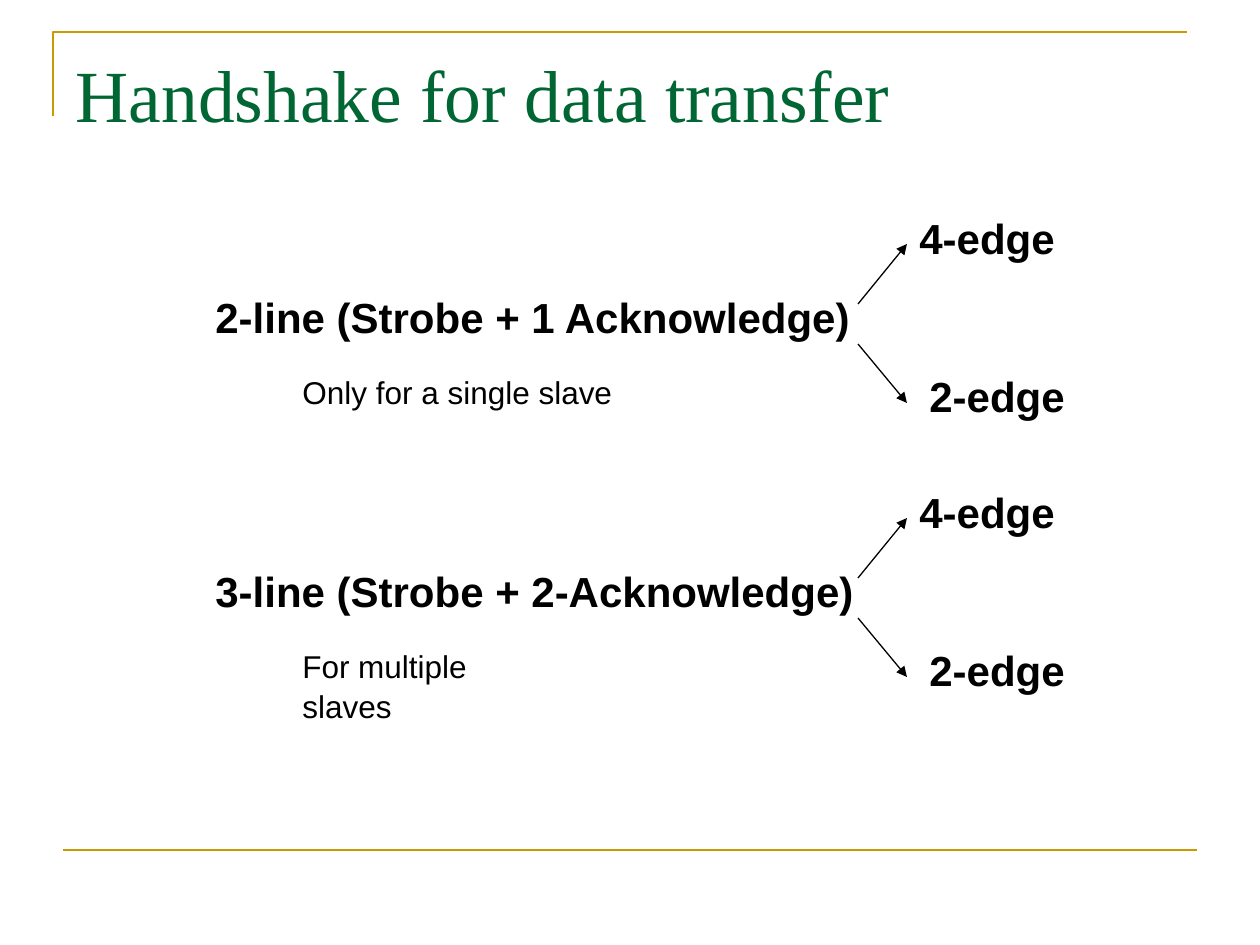
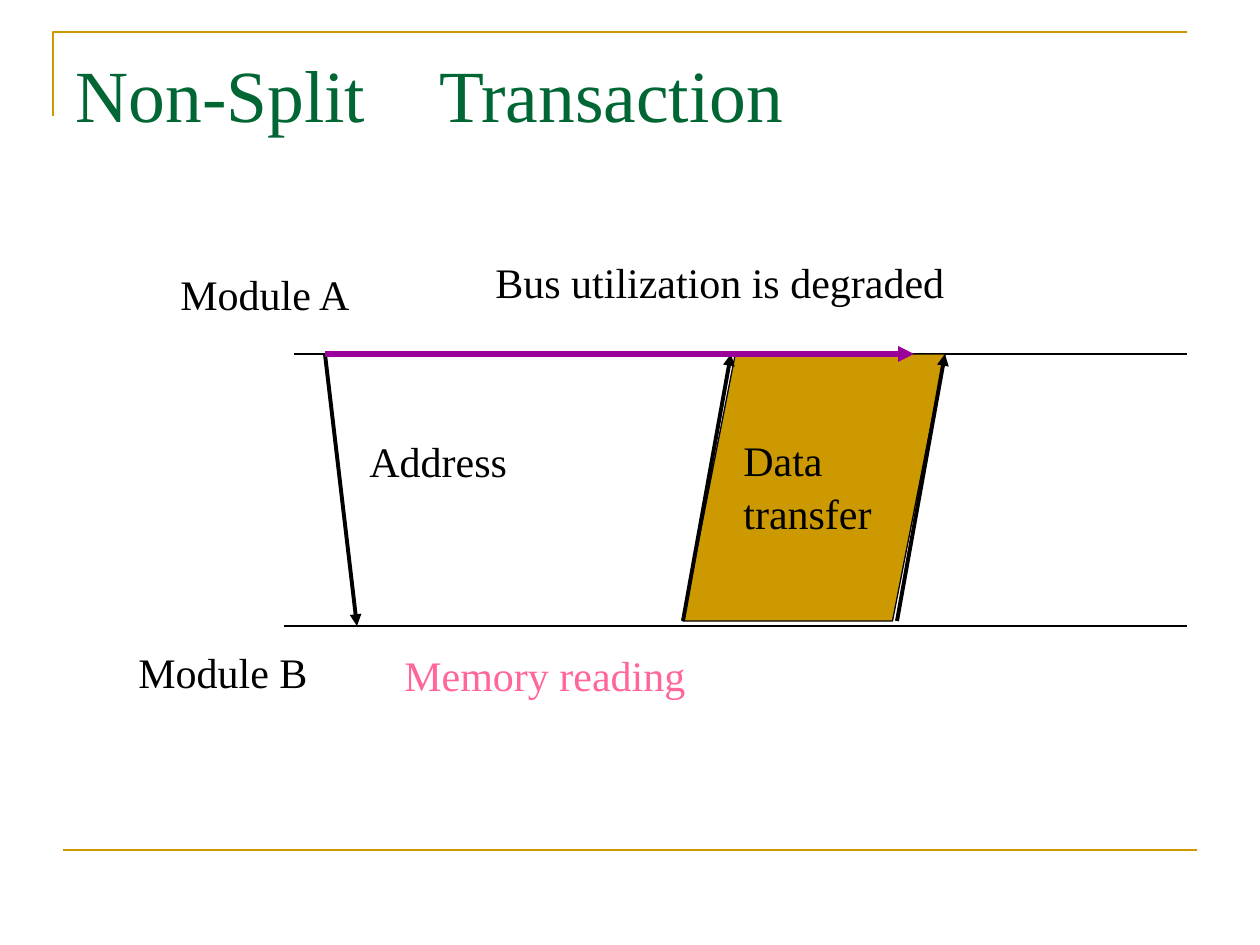
from dataclasses import dataclass

from lxml import etree
from pptx import Presentation
from pptx.dml.color import RGBColor
from pptx.enum.shapes import MSO_CONNECTOR, MSO_SHAPE
from pptx.enum.text import MSO_ANCHOR, MSO_AUTO_SIZE, PP_ALIGN
from pptx.oxml.ns import qn
from pptx.util import Pt

STRAIGHT = MSO_CONNECTOR.STRAIGHT
DATA_SHAPE = MSO_SHAPE.FLOWCHART_DATA
TOP = MSO_ANCHOR.TOP
LEFT = PP_ALIGN.LEFT
FIT_SHAPE, FIT_NONE = MSO_AUTO_SIZE.SHAPE_TO_FIT_TEXT, MSO_AUTO_SIZE.NONE
TITLE_ONLY = 5
EMU_PER_PX = 914400 / 126


@dataclass(frozen=True)
class Theme:
    green: str = "006633"
    gold: str = "CC9900"
    black: str = "000000"
    pink: str = "FF6699"
    purple: str = "990099"
    serif: str = "Times New Roman"
    sans: str = "Arial"
    title_size: int = 42
    label_size: int = 24
    note_size: int = 18
    line_spacing: float = 1.05
    thin: float = 0.75
    rule: float = 1.5
    thick: float = 2.25
    heavy: float = 3


THEME = Theme()

# Shared slide parts, in px
SLIDE_SIZE = (1260, 945)
TITLE_BOX = (63, 38, 1134, 157)
CORNER = [(53, 116), (53, 32), (1187, 32)]
FOOTER_RULE = ((63, 850), (1197, 850))

# Handshake slide: heading, heading width, note, note width
HANDSHAKE_TITLE = "Handshake for data transfer"
HANDSHAKES = [
    ("2-line (Strobe + 1 Acknowledge)", 673, "Only for a single slave", 335),
    ("3-line (Strobe + 2-Acknowledge)", 675, "For multiple slaves", 287),
]
HANDSHAKE_TOP, HANDSHAKE_PITCH = 204, 274
EDGE_STEP = 79
# Edge text, left, row, arrow start and end below the group top
EDGES = [("4-edge", 907, 0, 100, 40), ("2-edge", 917, 2, 140, 199)]
ARROW_LEFT, ARROW_RIGHT = 858, 907

# Transaction slide
TRANSACTION_TITLE = "Non-Split　Transaction"
BUS_A, BUS_B, BUS_END = 354, 626, 1187
DATA_LEFT, DATA_RIGHT, DATA_BOTTOM, DATA_SLANT = 683, 945, 621, 48
REQUEST_LEFT = 325
BUS_LINES = [((294, BUS_A), (BUS_END, BUS_A)), ((284, BUS_B), (BUS_END, BUS_B))]
DATA_ARROWS = [
    ((DATA_LEFT, DATA_BOTTOM), (DATA_LEFT + DATA_SLANT, BUS_A)),
    ((DATA_RIGHT - DATA_SLANT, DATA_BOTTOM), (DATA_RIGHT, BUS_A)),
]
TRANSACTION_LABELS = [
    ("Address", (357, 427, 242, 63), THEME.black),
    ("Memory reading", (392, 641, 325, 63), THEME.pink),
    ("Data transfer", (731, 426, 168, 164), THEME.black),
    ("Module A", (168, 260, 262, 63), THEME.black),
    ("Module B", (126, 638, 262, 63), THEME.black),
    ("Bus utilization is degraded", (483, 248, 577, 63), THEME.black),
]


def px(*lengths):
    return [round(length * EMU_PER_PX) for length in lengths]


def rgb(color):
    return RGBColor.from_string(color)


def style_line(line, color, width):
    line.color.rgb = rgb(color)
    line.width = Pt(width)


def write(shape, text, font, size, color, bold=False):
    paragraph = shape.text_frame.paragraphs[0]
    paragraph.text = text
    paragraph.alignment = LEFT
    paragraph.line_spacing = THEME.line_spacing
    paragraph.font.name = font
    paragraph.font.size = Pt(size)
    paragraph.font.bold = bold
    paragraph.font.color.rgb = rgb(color)
    shape.text_frame.vertical_anchor = TOP


def add_label(slide, text, box, font, size, color=THEME.black, bold=False, wrap=False):
    shape = slide.shapes.add_textbox(*px(*box))
    shape.text_frame.word_wrap = wrap
    shape.text_frame.auto_size = FIT_SHAPE
    write(shape, text, font, size, color, bold)


def add_line(slide, start, end, color=THEME.black, width=THEME.thin, arrow=False):
    connector = slide.shapes.add_connector(STRAIGHT, *px(*start, *end))
    style_line(connector.line, color, width)
    properties = connector.element.spPr
    if arrow:
        outline = properties.find(qn("a:ln"))
        etree.SubElement(outline, qn("a:tailEnd"), type="triangle")
    etree.SubElement(properties, qn("a:effectLst"))


def add_framed_slide(presentation, title_text):
    slide = presentation.slides.add_slide(presentation.slide_layouts[TITLE_ONLY])

    # Corner bracket and footer rule
    builder = slide.shapes.build_freeform(*CORNER[0], scale=EMU_PER_PX)
    builder.add_line_segments(CORNER[1:], close=False)
    corner = builder.convert_to_shape()
    corner.shadow.inherit = False
    corner.fill.background()
    style_line(corner.line, THEME.gold, THEME.rule)
    add_line(slide, *FOOTER_RULE, THEME.gold, THEME.rule)

    # Title
    title = slide.shapes.title
    title.left, title.top, title.width, title.height = px(*TITLE_BOX)
    title.text_frame.auto_size = FIT_NONE
    write(title, title_text, THEME.serif, THEME.title_size, THEME.green)
    return slide


def build_handshake(presentation):
    slide = add_framed_slide(presentation, HANDSHAKE_TITLE)
    for index, (heading, heading_width, note, note_width) in enumerate(HANDSHAKES):
        top = HANDSHAKE_TOP + index * HANDSHAKE_PITCH
        add_label(slide, heading, (203, top + EDGE_STEP, heading_width, 63),
                  THEME.sans, THEME.label_size, bold=True)
        add_label(slide, note, (290, top + 161, note_width, 50),
                  THEME.sans, THEME.note_size)
        for edge, left, row, arrow_start, arrow_end in EDGES:
            add_label(slide, edge, (left, top + row * EDGE_STEP, 173, 63),
                      THEME.sans, THEME.label_size, bold=True)
            add_line(slide, (ARROW_LEFT, top + arrow_start),
                     (ARROW_RIGHT, top + arrow_end), arrow=True)


def build_transaction(presentation):
    slide = add_framed_slide(presentation, TRANSACTION_TITLE)

    # Bus lines and address arrow
    for start, end in BUS_LINES:
        add_line(slide, start, end)
    add_line(slide, (REQUEST_LEFT, BUS_A), (357, BUS_B), width=THEME.thick, arrow=True)

    # Data block with its two arrows
    block = slide.shapes.add_shape(DATA_SHAPE, *px(
        DATA_LEFT, BUS_A, DATA_RIGHT - DATA_LEFT, DATA_BOTTOM - BUS_A))
    block.shadow.inherit = False
    block.fill.solid()
    block.fill.fore_color.rgb = rgb(THEME.gold)
    style_line(block.line, THEME.black, THEME.thin)
    for start, end in DATA_ARROWS:
        add_line(slide, start, end, width=THEME.thick, arrow=True)

    # Occupied bus time and labels
    add_line(slide, (REQUEST_LEFT, BUS_A), (914, BUS_A), THEME.purple, THEME.heavy, arrow=True)
    for text, box, color in TRANSACTION_LABELS:
        add_label(slide, text, box, THEME.serif, THEME.label_size, color, wrap=True)


def main():
    presentation = Presentation()
    presentation.slide_width, presentation.slide_height = px(*SLIDE_SIZE)
    build_handshake(presentation)
    build_transaction(presentation)
    presentation.save("out.pptx")


if __name__ == "__main__":
    main()
